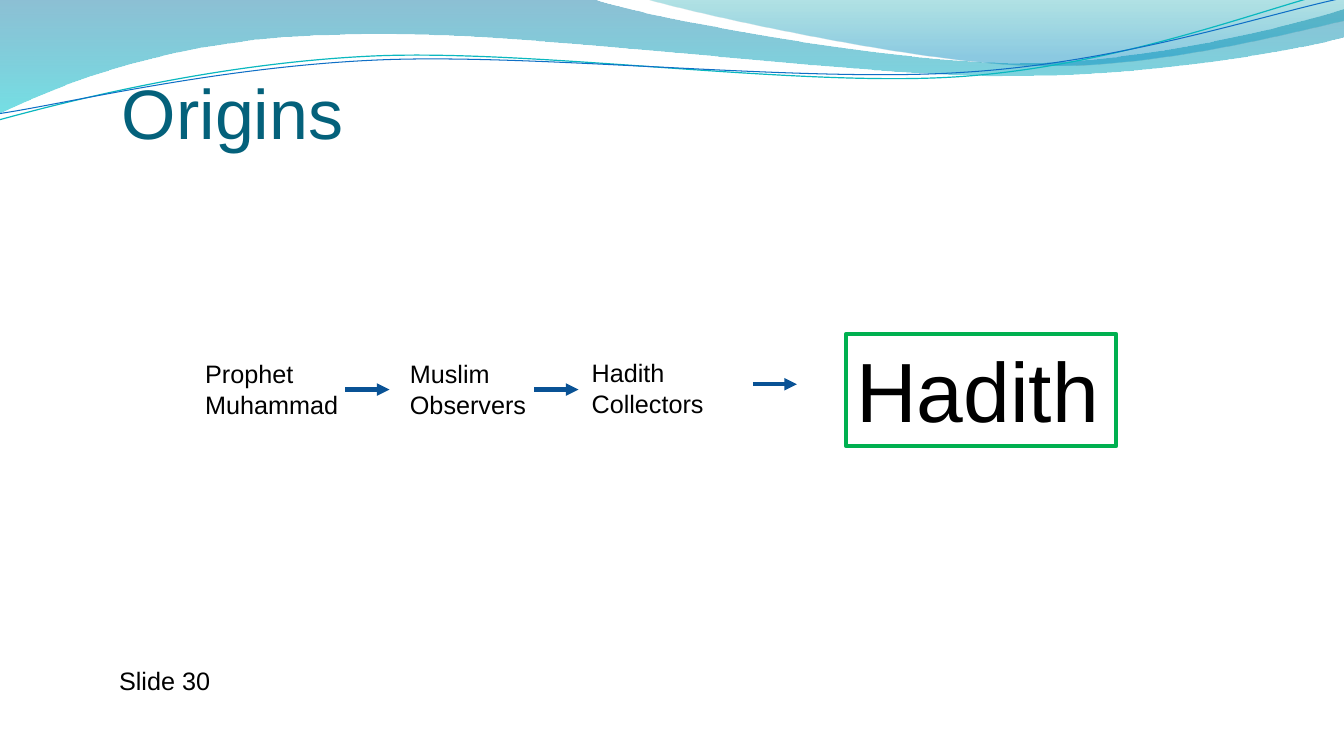
from lxml.etree import SubElement
from pptx import Presentation
from pptx.dml.color import RGBColor
from pptx.enum.shapes import MSO_CONNECTOR as CONN, MSO_SHAPE as SHAPE
from pptx.enum.text import MSO_ANCHOR as ANCHOR, MSO_AUTO_SIZE as FIT, PP_ALIGN as ALIGN
from pptx.oxml.ns import qn
from pptx.util import Pt

PX = 9525
FONT = "Arial"
BLACK = RGBColor(0x00, 0x00, 0x00)
TITLE = RGBColor(0x04, 0x61, 0x7B)
GREEN = RGBColor(0x00, 0xB0, 0x50)
ARROW = RGBColor(0x09, 0x52, 0x95)
DEEP_BLUE = RGBColor(0x00, 0x74, 0xA1)
CYAN = RGBColor(0x00, 0xC6, 0xCF)
TEAL = RGBColor(0x00, 0xA1, 0xA9)
BLUE = RGBColor(0x00, 0x8B, 0xBF)
TEAL_LINE = RGBColor(0x0A, 0xB8, 0xBF)
BLUE_LINE = RGBColor(0x0F, 0x6F, 0xC6)

WAVES = [
    ([(0, 0), (564, -1),
      (609, 16, 850, 60, 971, 60), (1092, 60, 1227, 25, 1280, 9),
      (1282, 35), (1259, 42, 1114, 73, 954, 72),
      (796, 72, 489, 27, 329, 33), (164, 35, 59, 80, -1, 108)],
     [(0, DEEP_BLUE, 45), (1, CYAN, 55)]),
    ([(613, -1), (652, 11, 873, 60, 984, 62),
      (1095, 66, 1231, 31, 1280, 20), (1280, 0)],
     [(0, TEAL, 30), (0.8, BLUE, 45)]),
]
STRANDS = [
    ([(-3, 84), (60, 70, 203, 40, 354, 40), (507, 40, 757, 89, 911, 86),
      (1065, 83, 1204, 35, 1280, 20)], TEAL_LINE, 0.85),
    ([(-2, 78), (59, 72, 209, 43, 363, 44), (516, 45, 763, 85, 916, 82),
      (1069, 80, 1207, 40, 1283, 28)], BLUE_LINE, 0.75),
]
STEPS = [("Prophet Muhammad", 0, 19, 184),
         ("Muslim Observers", 195, 19, 184),
         ("Hadith Collectors", 368, 18, 132)]
ARROWS = [(143, 53), (323, 53), (531, 48)]


def add_outline(s, outline, x, y, close):
    points = [((x + part[i]) * PX, (y + part[i + 1]) * PX)
              for part in outline for i in range(0, len(part), 2)]
    builder = s.shapes.build_freeform(*points[0])
    builder.add_line_segments(points[1:], close=close)
    sp = builder.convert_to_shape()
    sp.shadow.inherit = False
    segments = iter(list(sp.element.spPr.iter(qn("a:lnTo"))))
    for part in outline[1:]:
        first = next(segments)
        if len(part) == 6:
            curve = SubElement(first.getparent(), qn("a:cubicBezTo"))
            first.addprevious(curve)
            for segment in (first, next(segments), next(segments)):
                curve.append(segment[0])
                segment.getparent().remove(segment)
    return sp


def add_waves(s, x, y):
    for outline, stops in WAVES:
        sp = add_outline(s, outline, x, y, True)
        sp.line.fill.background()
        sp.fill.gradient()
        sp.fill.gradient_angle = 270
        for stop, (position, color, _) in zip(sp.fill.gradient_stops, stops):
            stop.position = position
            stop.color.rgb = color
        colors = list(sp.element.spPr.iter(qn("a:srgbClr")))
        for node, (_, _, alpha) in zip(colors, stops):
            SubElement(node, qn("a:alpha"), val=str(alpha * 1000))
    for outline, color, width in STRANDS:
        sp = add_outline(s, outline, x, y, False)
        sp.rotation = 357.3
        sp.fill.background()
        sp.line.color.rgb = color
        sp.line.width = Pt(width)


def write(sp, text, size, color=BLACK, anchor=ANCHOR.TOP):
    tf = sp.text_frame
    tf.word_wrap = True
    tf.vertical_anchor = anchor
    p = tf.paragraphs[0]
    p.alignment = ALIGN.LEFT
    r = p.add_run()
    r.text = text
    r.font.name = FONT
    r.font.size = Pt(size)
    r.font.color.rgb = color
    return tf


def add_text(s, x, y, w, h, text, size, **style):
    sp = s.shapes.add_textbox(x * PX, y * PX, w * PX, h * PX)
    return write(sp, text, size, **style)


def add_title(s, x, y, w, h):
    tf = add_text(s, x, y, w, h, "Origins", 50, color=TITLE, anchor=ANCHOR.BOTTOM)
    tf.margin_left = tf.margin_right = tf.margin_bottom = 0


def add_arrow(s, x, y, w):
    arrow = s.shapes.add_connector(CONN.STRAIGHT, x * PX, y * PX, (x + w) * PX, y * PX)
    arrow.line.color.rgb = ARROW
    arrow.line.width = Pt(3)
    sp_pr = arrow.element.spPr
    SubElement(sp_pr.find(qn("a:ln")), qn("a:tailEnd"), type="triangle")
    SubElement(sp_pr, qn("a:effectLst"))


def add_chain(s, x, y, w, h):
    goal_w = 257
    goal = s.shapes.add_shape(SHAPE.RECTANGLE, (x + w - goal_w) * PX, y * PX,
                              goal_w * PX, h * PX)
    goal.shadow.inherit = False
    goal.fill.background()
    goal.line.color.rgb = GREEN
    goal.line.width = Pt(3)
    write(goal, "Hadith", 60).auto_size = FIT.SHAPE_TO_FIT_TEXT
    for text, dx, dy, step_w in STEPS:
        tf = add_text(s, x + dx, y + dy, step_w, 68, text, 18)
        tf.auto_size = FIT.SHAPE_TO_FIT_TEXT
    for dx, dy in ARROWS:
        add_arrow(s, x + dx, y + dy, 42)


def main():
    prs = Presentation()
    prs.slide_width, prs.slide_height = 1280 * PX, 720 * PX
    s = prs.slides.add_slide(prs.slide_layouts[6])
    add_waves(s, 0, 0)
    add_title(s, 116, 26, 1163, 120)
    add_text(s, 104, 629, 113, 38, "Slide 30", 18)
    add_chain(s, 186, 318, 877, 107)
    prs.save("out.pptx")


if __name__ == "__main__":
    main()
